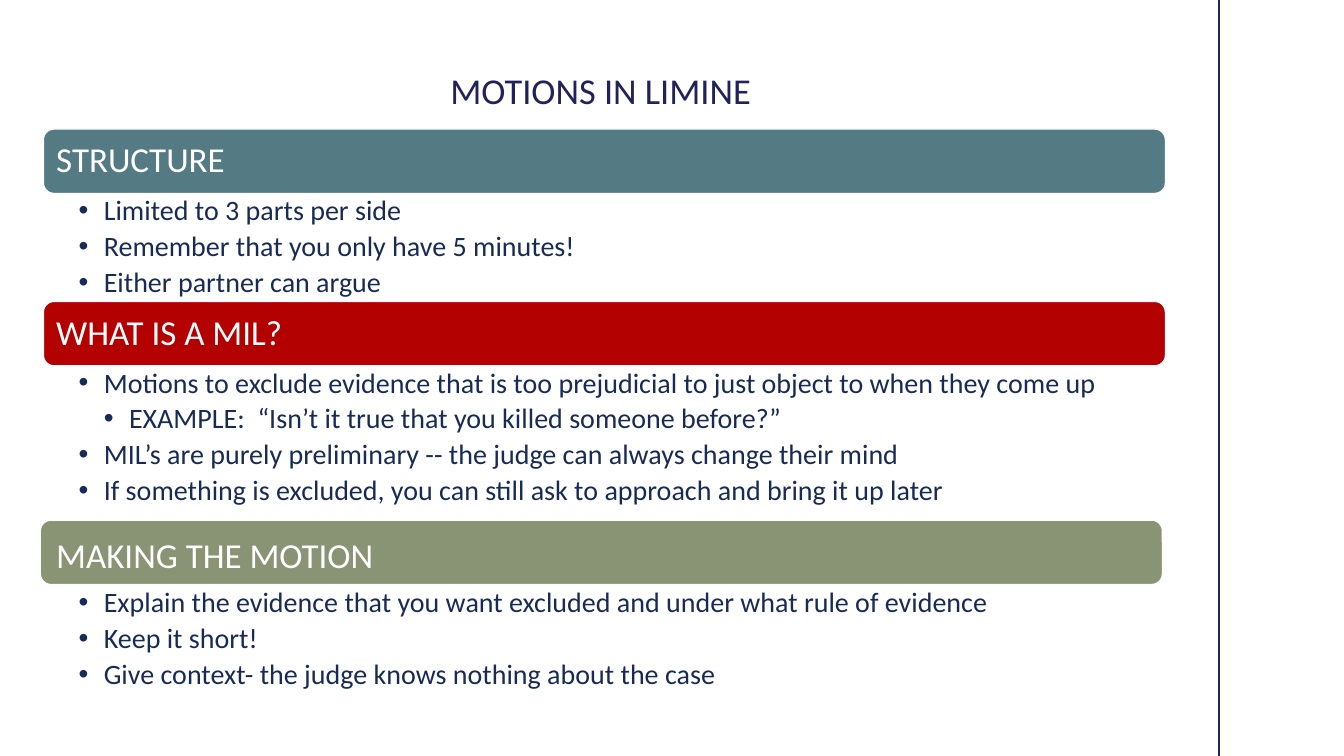
from dataclasses import dataclass

from lxml import etree
from pptx import Presentation
from pptx import util as u
from pptx.dml.color import RGBColor
from pptx.enum import shapes, text
from pptx.oxml import ns

PX = 9144  # one px is a hundredth of an inch
FONT = "Calibri"
NAVY, INDIGO, WHITE = "182B55", "21225B", "FFFFFF"
INDENT = 25
LEFT, WIDTH = 43, 1113
BAR_HEIGHT, LABEL_HEIGHT = 64, 58


@dataclass(frozen=True)
class Box:
    left: int
    top: int
    width: int
    height: int


@dataclass(frozen=True)
class Bullet:
    wording: str
    level: int = 1


@dataclass(frozen=True)
class Section:
    heading: str
    fill: str
    bar: tuple[int, int]
    label_top: int
    body_top: int
    body_height: int
    bullets: tuple[Bullet, ...]


SECTIONS = (
    Section("STRUCTURE", "547B84", (LEFT, 128), 131, 192, 108, (
        Bullet("Limited to 3 parts per side"),
        Bullet("Remember that you only have 5 minutes!"),
        Bullet("Either partner can argue"),
    )),
    Section("WHAT IS A MIL?", "B30000", (LEFT, 299), 302, 363, 136, (
        Bullet("Motions to exclude evidence that is too prejudicial "
               "to just object to when they come up"),
        Bullet("EXAMPLE:  “Isn’t it true that you killed someone before?”", 2),
        Bullet("MIL’s are purely preliminary -- the judge can always change their mind"),
        Bullet("If something is excluded, you can still ask to approach and bring it up later"),
    )),
    Section("MAKING THE MOTION", "889474", (40, 516), 524, 581, 144, (
        Bullet("Explain the evidence that you want excluded and under what rule of evidence"),
        Bullet("Keep it short!"),
        Bullet("Give context- the judge knows nothing about the case"),
    )),
)


def px(length: int) -> u.Emu:
    return u.Emu(length * PX)


def color(value: str) -> RGBColor:
    return RGBColor.from_string(value)


def apply(target, values: dict) -> None:
    for name, value in values.items():
        setattr(target, name, value)


def place(box: Box) -> tuple[u.Emu, ...]:
    return px(box.left), px(box.top), px(box.width), px(box.height)


def add_frame(page, box: Box, insets: tuple[int, int, int, int], anchor):
    frame = page.shapes.add_textbox(*place(box)).text_frame
    left, top, right, bottom = map(px, insets)
    apply(frame, {
        "word_wrap": True, "vertical_anchor": anchor,
        "margin_left": left, "margin_top": top,
        "margin_right": right, "margin_bottom": bottom,
    })
    return frame


def write(para, wording: str, size: int, ink: str) -> None:
    para.line_spacing = 0.9
    span = para.add_run()
    span.text = wording
    apply(span.font, {"name": FONT, "size": u.Pt(size)})
    span.font.color.rgb = color(ink)


def add_bullet_mark(para, level: int) -> None:
    props = para._p.get_or_add_pPr()
    props.set("marL", str(px(INDENT * level)))
    props.set("indent", str(px(-INDENT)))
    tint = etree.SubElement(props, ns.qn("a:buClr"))
    etree.SubElement(tint, ns.qn("a:srgbClr"), val=NAVY)
    etree.SubElement(props, ns.qn("a:buFont"), typeface="Arial")
    etree.SubElement(props, ns.qn("a:buChar"), char="•")


def add_heading(page, wording: str, box: Box, inset: int, size: int, ink: str, align) -> None:
    frame = add_frame(page, box, (inset,) * 4, text.MSO_ANCHOR.MIDDLE)
    para = frame.paragraphs[0]
    para.alignment = align
    write(para, wording, size, ink)


def add_bar(page, section: Section) -> None:
    box = Box(*section.bar, WIDTH, BAR_HEIGHT)
    bar = page.shapes.add_shape(shapes.MSO_SHAPE.ROUNDED_RECTANGLE, *place(box))
    bar.shadow.inherit = False
    bar.fill.solid()
    bar.fill.fore_color.rgb = color(section.fill)
    bar.line.color.rgb = color(WHITE)
    bar.line.width = u.Pt(1)


def add_bullets(page, section: Section) -> None:
    box = Box(LEFT, section.body_top, WIDTH, section.body_height)
    frame = add_frame(page, box, (35, 3, 19, 3), text.MSO_ANCHOR.TOP)
    for index, bullet in enumerate(section.bullets):
        para = frame.add_paragraph() if index else frame.paragraphs[0]
        para.level = bullet.level
        para.space_before = u.Pt(4 if index else 0)
        add_bullet_mark(para, bullet.level)
        write(para, bullet.wording, 20, NAVY)


def add_rule(page) -> None:
    rule = page.shapes.add_connector(
        shapes.MSO_CONNECTOR.STRAIGHT, px(1209), px(0), px(1209), px(750))
    rule.line.color.rgb = color(NAVY)
    rule.line.width = u.Pt(1)
    etree.SubElement(rule._element.spPr, ns.qn("a:effectLst"))


def main() -> None:
    deck = Presentation()
    apply(deck, {"slide_width": px(1333), "slide_height": px(750)})
    page = deck.slides.add_slide(deck.slide_layouts[6])

    # Margin rule and title
    add_rule(page)
    add_heading(page, "MOTIONS IN LIMINE", Box(LEFT, 37, 1106, 110), 20, 26,
                INDIGO, text.PP_ALIGN.CENTER)

    # Coloured bars, each with its heading and bullets
    for section in SECTIONS:
        add_bar(page, section)
        label = Box(46, section.label_top, 1106, LABEL_HEIGHT)
        add_heading(page, section.heading, label, 10, 25, WHITE, text.PP_ALIGN.LEFT)
        add_bullets(page, section)

    deck.save("out.pptx")


if __name__ == "__main__":
    main()
